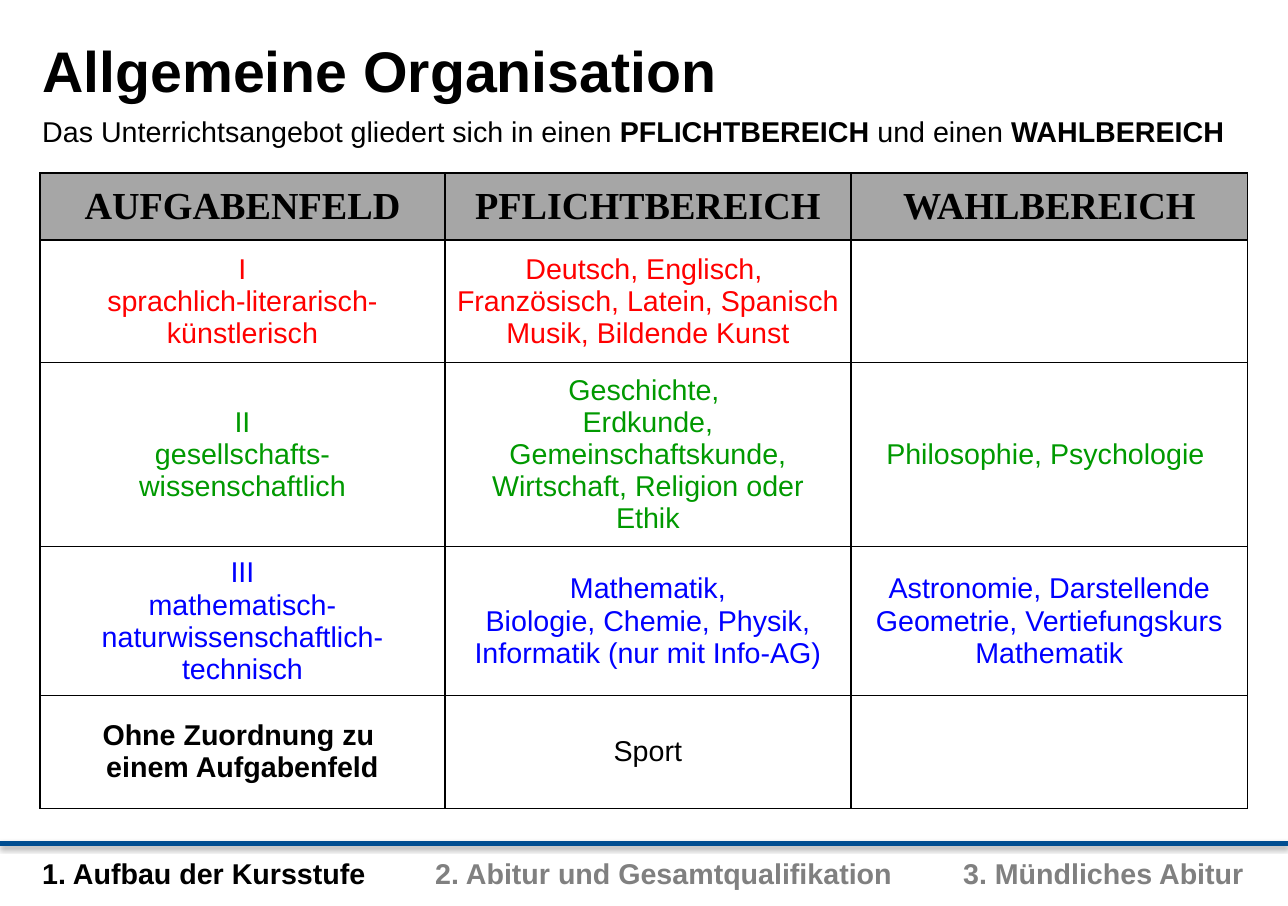
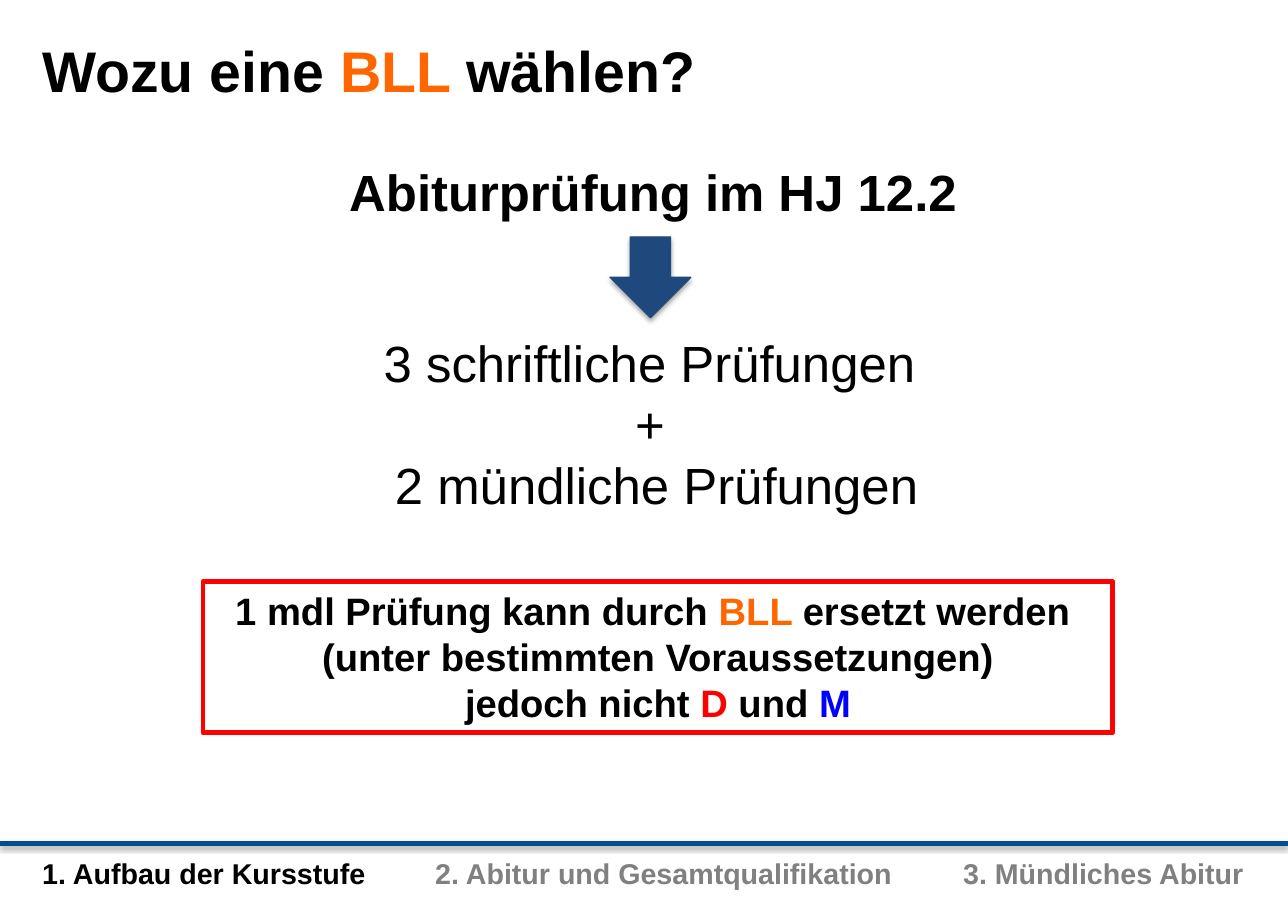
from lxml import etree
from pptx import Presentation
from pptx.dml.color import RGBColor
from pptx.enum.shapes import MSO_CONNECTOR as Conn, MSO_SHAPE as Shape
from pptx.enum.text import MSO_ANCHOR as Anchor, MSO_AUTO_SIZE as Auto, PP_ALIGN as Align
from pptx.oxml import parse_xml
from pptx.oxml.ns import nsdecls, qn
from pptx.util import Pt

SCALE = 7986  # EMU per px
WIDE, HIGH = Pt(810), Pt(570)
LEFT = 31
BLACK, GREY, RED, BLUE = "000000", "808080", "FF0000", "0000FF"
GREEN, ORANGE, NAVY, RULE, HEAD = "009900", "FF6600", "1F497D", "004E91", "A6A6A6"

# Text: a list of paragraphs, each a list of runs (text, colour, bold)
FOOTER = [[("1. Aufbau der Kursstufe\t", BLACK, True),
           ("2. Abitur und Gesamtqualifikation\t3. Mündliches Abitur", GREY, True)]]
STOPS = (393, 921)

TITLES = (
    [[("Allgemeine Organisation", BLACK, True)]],
    [[("Wozu eine ", BLACK, True), ("BLL ", ORANGE, True), ("wählen?", BLACK, True)]],
)
INTRO = [[("Das Unterrichtsangebot gliedert sich in einen ", BLACK, False),
          ("PFLICHTBEREICH ", BLACK, True),
          ("und einen ", BLACK, False),
          ("WAHLBEREICH", BLACK, True)]]

COLS = (405, 406, 397)
# Row height, colour, cells as lists of lines
ROWS = (
    (67, BLACK, (["AUFGABENFELD"], ["PFLICHTBEREICH"], ["WAHLBEREICH"])),
    (123, RED, (["I", "sprachlich-literarisch-", "künstlerisch"],
                ["Deutsch, Englisch, ", "Französisch, Latein, Spanisch",
                 "Musik, Bildende Kunst"],
                [])),
    (184, GREEN, (["II", "gesellschafts-", "wissenschaftlich"],
                  ["Geschichte, ", "Erdkunde, Gemeinschaftskunde,",
                   "Wirtschaft, Religion oder Ethik"],
                  ["Philosophie, Psychologie "])),
    (148, BLUE, (["III", "mathematisch-", "naturwissenschaftlich-", "technisch"],
                 ["Mathematik,", "Biologie, Chemie, Physik, Informatik (nur mit Info-AG)"],
                 ["Astronomie, Darstellende Geometrie, Vertiefungskurs Mathematik"])),
    (113, BLACK, (["Ohne Zuordnung zu ", "einem Aufgabenfeld"], ["Sport"], [])),
)

EXAM = [[("Abiturprüfung im HJ 12.2", BLACK, True)]]
PARTS = [[(line, BLACK, False)] for line in
         ("3 schriftliche Prüfungen ", "+ ", "2 mündliche Prüfungen")]
NOTE = [
    [("1 mdl Prüfung kann durch ", BLACK, True), ("BLL ", ORANGE, True),
     ("ersetzt werden ", BLACK, True)],
    [("(unter bestimmten Voraussetzungen)", BLACK, True)],
    [("jedoch nicht ", BLACK, True), ("D", RED, True), (" und ", BLACK, True),
     ("M", BLUE, True)],
]


def px(*values):
    return [value * SCALE for value in values]


def rgb(code):
    return RGBColor.from_string(code)


def write(frame, paras, size, align=Align.LEFT, space=None, font="Arial", stops=()):
    for i, runs in enumerate(paras):
        para = frame.paragraphs[0] if i == 0 else frame.add_paragraph()
        if stops:
            tabs = etree.SubElement(para._p.get_or_add_pPr(), qn("a:tabLst"))
            for stop in stops:
                etree.SubElement(tabs, qn("a:tab"), pos=str(stop * SCALE), algn="l")
        para.alignment = align
        if space:
            para.line_spacing = space
        for text, color, bold in runs:
            run = para.add_run()
            run.text = text
            run.font.name, run.font.size, run.font.bold = font, Pt(size), bold
            run.font.color.rgb = rgb(color)


def add_text(slide, box, paras, size, **style):
    frame = slide.shapes.add_textbox(*px(*box)).text_frame
    frame.word_wrap = True
    write(frame, paras, size, **style)


def shade(shape, dist, alpha):
    """Give a shape a soft shadow straight below it."""
    shape._element.spPr.append(parse_xml(
        f'<a:effectLst {nsdecls("a")}><a:outerShdw blurRad="40000" dist="{dist}" '
        f'dir="5400000" rotWithShape="0"><a:srgbClr val="{BLACK}">'
        f'<a:alpha val="{alpha}"/></a:srgbClr></a:outerShdw></a:effectLst>'))


def edge(cell):
    """Draw thin black borders round a cell."""
    props = cell._tc.get_or_add_tcPr()
    for i, side in enumerate("LRTB"):
        props.insert(i, parse_xml(
            f'<a:ln{side} {nsdecls("a")} w="12700"><a:solidFill>'
            f'<a:srgbClr val="{BLACK}"/></a:solidFill></a:ln{side}>'))


def add_rule(slide, layout):
    """Put the blue line above the footer on the shared layout."""
    high = 844 * SCALE
    line = slide.shapes.add_connector(Conn.STRAIGHT, 0, high, WIDE, high)
    line.line.color.rgb, line.line.width = rgb(RULE), Pt(3)
    shade(line, 20000, 38000)
    line._element.nvCxnSpPr.cNvPr.id = 20
    layout.shapes.element.append(line._element)


def add_slide(deck, layout, title):
    slide = deck.slides.add_slide(layout)
    head = slide.shapes.title
    head.left, head.top, head.width, head.height = px(LEFT, 30, 1235, 80)
    frame = head.text_frame
    frame.auto_size, frame.vertical_anchor = Auto.NONE, Anchor.TOP
    write(frame, title, 36)
    add_text(slide, (LEFT, 855, 1257, 44), FOOTER, 18, space=0.9, stops=STOPS)
    return slide


def add_grid(slide):
    high = sum(row[0] for row in ROWS)
    table = slide.shapes.add_table(len(ROWS), len(COLS),
                                   *px(40, 173, sum(COLS), high)).table
    table.first_row = table.horz_banding = False
    for col, wide in zip(table.columns, COLS):
        col.width = wide * SCALE
    for r, (high, color, cells) in enumerate(ROWS):
        table.rows[r].height = high * SCALE
        for c, lines in enumerate(cells):
            cell = table.cell(r, c)
            cell.vertical_anchor = Anchor.MIDDLE
            top = r == 0
            if top:
                cell.fill.solid()
                cell.fill.fore_color.rgb = rgb(HEAD)
            else:
                cell.fill.background()
            edge(cell)
            bold = top or (r == len(ROWS) - 1 and c == 0)
            write(cell.text_frame, [[(line, color, bold)] for line in lines],
                  24 if top else 18, Align.CENTER,
                  font="Times New Roman" if top else "Arial")


def add_arrow(slide):
    arrow = slide.shapes.add_shape(Shape.DOWN_ARROW, *px(610, 237, 81, 81))
    arrow.fill.solid()
    arrow.fill.fore_color.rgb = arrow.line.color.rgb = rgb(NAVY)
    arrow.line.width = Pt(0.75)
    shade(arrow, 23000, 35000)


def add_note(slide):
    note = slide.shapes.add_shape(Shape.RECTANGLE, *px(203, 582, 910, 151))
    note.shadow.inherit = False
    note.fill.background()
    note.line.color.rgb, note.line.width = rgb(RED), Pt(3)
    note.text_frame.word_wrap = True
    note.text_frame.vertical_anchor = Anchor.TOP
    write(note.text_frame, NOTE, 24, Align.CENTER)


def main():
    deck = Presentation()
    deck.slide_width, deck.slide_height = WIDE, HIGH
    layout = deck.slide_layouts[5]
    plan, why = [add_slide(deck, layout, title) for title in TITLES]
    add_rule(plan, layout)

    add_text(plan, (LEFT, 108, 1235, 44), INTRO, 18)
    add_grid(plan)

    add_text(why, (338, 155, 649, 73), EXAM, 32)
    add_arrow(why)
    add_text(why, (310, 326, 694, 218), PARTS, 32, align=Align.CENTER)
    add_note(why)
    deck.save("out.pptx")


if __name__ == "__main__":
    main()
